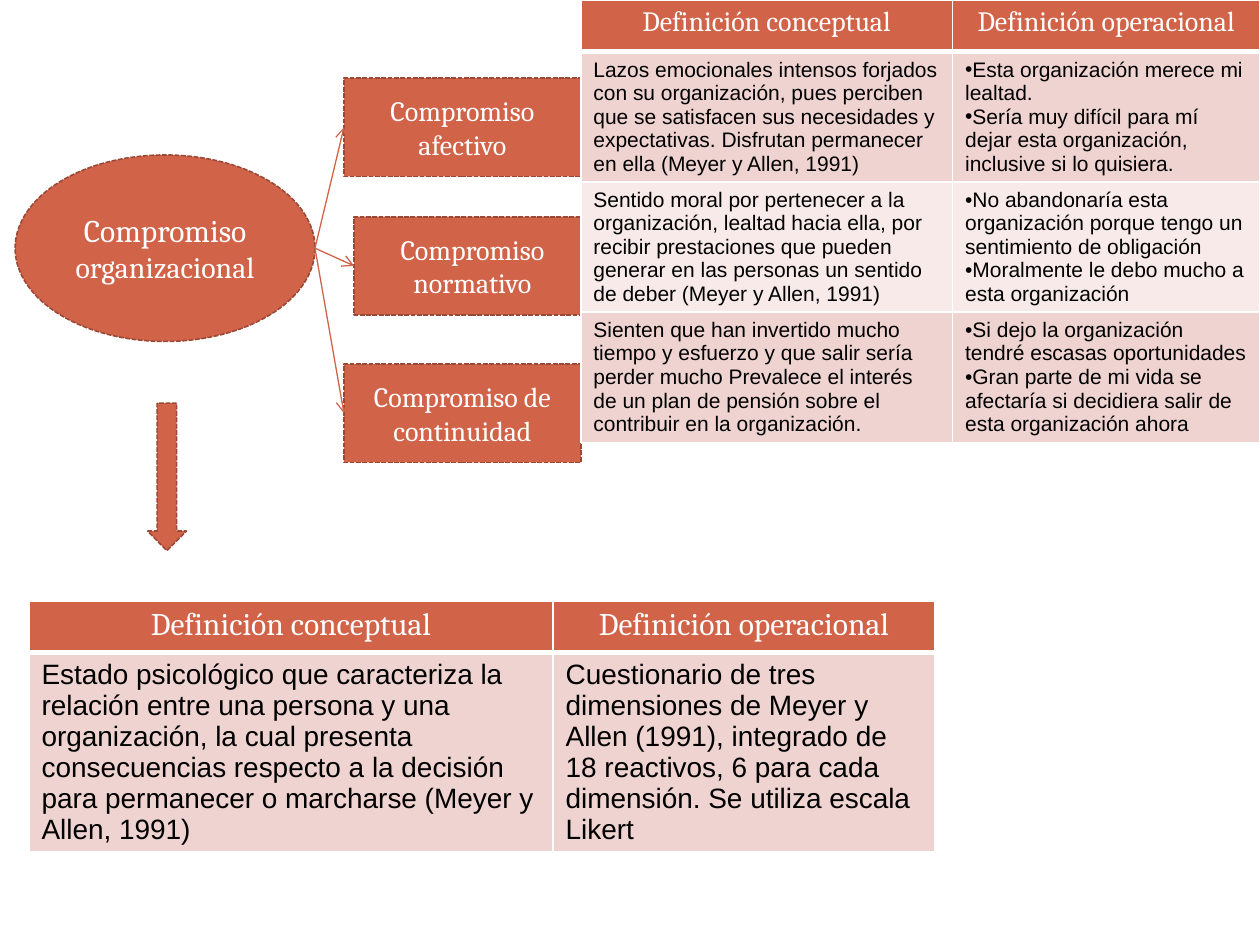
from lxml.etree import SubElement
from pptx import Presentation
from pptx.dml.color import RGBColor
from pptx.enum.dml import MSO_LINE
from pptx.enum.shapes import MSO_CONNECTOR, MSO_SHAPE
from pptx.enum.text import MSO_ANCHOR, PP_ALIGN
from pptx.oxml.ns import qn
from pptx.util import Inches, Pt

RUST = RGBColor(0xD1, 0x63, 0x49)
EDGE = RGBColor(0x9B, 0x49, 0x36)
PINK = RGBColor(0xEE, 0xD3, 0xD0)
PALE = RGBColor(0xF7, 0xEA, 0xE9)
WHITE = RGBColor(0xFF, 0xFF, 0xFF)
BLACK = RGBColor(0, 0, 0)

# Content: main concept, its dimensions (text, left, top) and the tables
MAIN = [("Compromiso ", 18), ("organizacional", 17)]
PARTS = [
    ("Compromiso afectivo", 2.73, 0.62),
    ("Compromiso normativo", 2.81, 1.72),
    ("Compromiso de continuidad", 2.73, 2.89),
]
HEADS = ["Definición conceptual", "Definición operacional"]

# A list in a cell is shown as bullets
WHOLE = [[
    "Estado psicológico que caracteriza la relación entre una persona y una "
    "organización, la cual presenta consecuencias respecto a la decisión para "
    "permanecer o marcharse (Meyer y Allen, 1991)",
    "Cuestionario de tres dimensiones de Meyer y Allen (1991), integrado de "
    "18 reactivos, 6 para cada dimensión. Se utiliza escala Likert",
]]
DETAIL = [
    ["Lazos emocionales intensos forjados con su organización, pues perciben "
     "que se satisfacen sus necesidades y expectativas. Disfrutan permanecer "
     "en ella (Meyer y Allen, 1991)",
     ["Esta organización merece mi lealtad.",
      "Sería muy difícil para mí dejar esta organización, inclusive si lo "
      "quisiera."]],
    ["Sentido moral por pertenecer a la organización, lealtad hacia ella, por "
     "recibir prestaciones que pueden generar en las personas un sentido de "
     "deber (Meyer y Allen, 1991)",
     ["No abandonaría esta organización porque tengo un sentimiento de "
      "obligación",
      "Moralmente le debo mucho a esta organización"]],
    ["Sienten que han invertido mucho tiempo y esfuerzo y que salir sería "
     "perder mucho Prevalece el interés de un plan de pensión sobre el "
     "contribuir en la organización.",
     ["Si dejo la organización tendré escasas oportunidades",
      "Gran parte de mi vida se afectaría si decidiera salir de esta "
      "organización ahora"]],
]
HEAD_H = 0.41
OVAL = (0.12, 1.23, 2.38, 1.48)
BOX_W, BOX_H = 1.88, 0.78

prs = Presentation()
prs.slide_width, prs.slide_height = Inches(10), Inches(7.5)
slide = prs.slides.add_slide(prs.slide_layouts[6])


def style(para, size, face, color, align=PP_ALIGN.LEFT):
    para.alignment = align
    font = para.font
    font.size, font.name, font.bold = Pt(size), face, False
    font.color.rgb = color


def add_shape(kind, place, runs=()):
    shape = slide.shapes.add_shape(kind, *map(Inches, place))
    shape.shadow.inherit = False
    shape.fill.solid()
    shape.fill.fore_color.rgb = RUST
    shape.line.color.rgb = EDGE
    shape.line.width = Pt(0.9)
    shape.line.dash_style = MSO_LINE.SQUARE_DOT
    if runs:
        frame = shape.text_frame
        frame.word_wrap = True
        frame.vertical_anchor = MSO_ANCHOR.MIDDLE
        para = frame.paragraphs[0]
        style(para, runs[0][1], "Cambria", WHITE, PP_ALIGN.CENTER)
        for text, size in runs:
            run = para.add_run()
            run.text, run.font.size = text, Pt(size)


def add_arrow(start, end):
    line = slide.shapes.add_connector(
        MSO_CONNECTOR.STRAIGHT, *map(Inches, start + end))
    line.line.color.rgb = RUST
    line.line.width = Pt(0.75)
    SubElement(line.line._get_or_add_ln(), qn("a:tailEnd"), type="arrow")
    SubElement(line._element.spPr, qn("a:effectLst"))


def add_borders(cell, row):
    widths = {"L": 1, "R": 1, "T": 3 if row == 1 else 1,
              "B": 3 if row == 0 else 1}
    props = cell._tc.get_or_add_tcPr()
    for side, width in widths.items():
        edge = SubElement(props, qn("a:ln" + side), w=str(Pt(width)))
        fill = SubElement(edge, qn("a:solidFill"))
        SubElement(fill, qn("a:srgbClr"), val=str(WHITE))


def add_bullet(para):
    props = para._p.get_or_add_pPr()
    props.set("marL", "0")
    props.set("indent", str(Inches(-0.04)))
    SubElement(props, qn("a:buFont"), typeface="Arial")
    SubElement(props, qn("a:buChar"), char="•")
    tabs = SubElement(props, qn("a:tabLst"))
    SubElement(tabs, qn("a:tab"), pos=str(Inches(0.25)), algn="l")


def add_table(left, top, cols, body, row_h, head_size, size):
    rows = [HEADS] + body
    heights = [HEAD_H] + [row_h] * len(body)
    table = slide.shapes.add_table(
        len(rows), len(cols), Inches(left), Inches(top),
        Inches(sum(cols)), Inches(sum(heights))).table
    table.first_row = table.horz_banding = False
    for col, width in zip(table.columns, cols):
        col.width = Inches(width)
    for r, (row, height) in enumerate(zip(rows, heights)):
        table.rows[r].height = Inches(height)
        for c, item in enumerate(row):
            cell = table.cell(r, c)
            add_borders(cell, r)
            cell.fill.solid()
            cell.fill.fore_color.rgb = RUST if r == 0 else (PALE, PINK)[r % 2]
            listed = isinstance(item, list)
            cell.text = "\n".join(item) if listed else item
            for para in cell.text_frame.paragraphs:
                if r == 0:
                    style(para, head_size, "Cambria", WHITE, PP_ALIGN.CENTER)
                else:
                    style(para, size, "Arial", BLACK)
                if listed:
                    add_bullet(para)


# Main concept and its definition
add_shape(MSO_SHAPE.OVAL, OVAL, MAIN)
add_shape(MSO_SHAPE.DOWN_ARROW, (1.17, 3.2, 0.31, 1.17))
add_table(0.23, 4.77, [4.16, 3.03], WHOLE, 1.58, 18, 16)

# Dimensions, each joined to the oval's right tip
tip = (OVAL[0] + OVAL[2], OVAL[1] + OVAL[3] / 2)
for text, left, top in PARTS:
    add_shape(MSO_SHAPE.RECTANGLE, (left, top, BOX_W, BOX_H), [(text, 16)])
    add_arrow(tip, (left, top + BOX_H / 2))

# Definitions of the dimensions
add_table(4.61, 0, [2.95, 2.44], DETAIL, 1.03, 16, 12)

prs.save("out.pptx")
